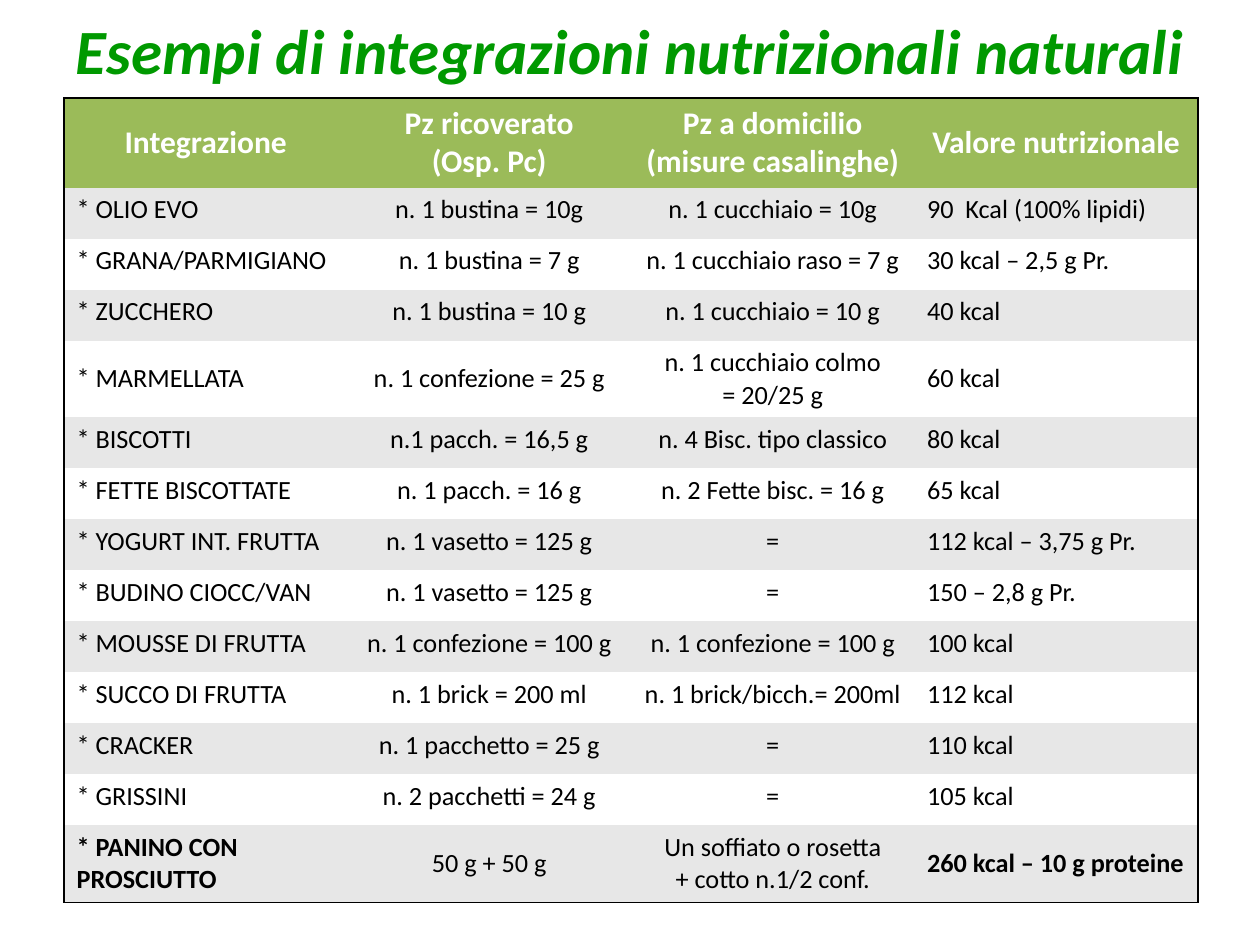
from dataclasses import dataclass

from lxml.etree import SubElement
from pptx import Presentation
from pptx.dml.color import RGBColor as Rgb
from pptx.enum.text import MSO_ANCHOR as Anchor, PP_ALIGN as Align
from pptx.oxml.ns import qn
from pptx.util import Emu, Pt

PX_PER_INCH = 126


@dataclass(frozen=True)
class Theme:
    font: str = "Calibri"
    title_size: int = 36
    header_size: int = 18
    body_size: int = 15
    border_width: int = 1
    title: str = "009900"
    header: str = "9BBB59"
    band: str = "E7E7E7"
    paper: str = "FFFFFF"
    ink: str = "000000"


@dataclass(frozen=True)
class Supplement:
    name: str
    hospital: str
    home: str
    value: str
    bold_ends: bool = False

    def cells(self) -> tuple[str, ...]:
        return (f"* {self.name}", self.hospital, self.home, self.value)


THEME = Theme()
HEADINGS = (
    "Integrazione",
    "Pz ricoverato\n(Osp. Pc)",
    "Pz a domicilio (misure casalinghe)",
    "Valore nutrizionale",
)
SUPPLEMENTS = (
    Supplement("OLIO EVO", "n. 1 bustina = 10g", "n. 1 cucchiaio = 10g", "90  Kcal (100% lipidi)"),
    Supplement("GRANA/PARMIGIANO", "n. 1 bustina = 7 g", "n. 1 cucchiaio raso = 7 g", "30 kcal – 2,5 g Pr."),
    Supplement("ZUCCHERO", "n. 1 bustina = 10 g", "n. 1 cucchiaio = 10 g", "40 kcal"),
    Supplement("MARMELLATA", "n. 1 confezione = 25 g", "n. 1 cucchiaio colmo\n= 20/25 g", "60 kcal"),
    Supplement("BISCOTTI", "n.1 pacch. = 16,5 g", "n. 4 Bisc. tipo classico", "80 kcal"),
    Supplement("FETTE BISCOTTATE", "n. 1 pacch. = 16 g", "n. 2 Fette bisc. = 16 g", "65 kcal"),
    Supplement("YOGURT INT. FRUTTA", "n. 1 vasetto = 125 g", "=", "112 kcal – 3,75 g Pr."),
    Supplement("BUDINO CIOCC/VAN", "n. 1 vasetto = 125 g", "=", "150 – 2,8 g Pr."),
    Supplement("MOUSSE DI FRUTTA", "n. 1 confezione = 100 g", "n. 1 confezione = 100 g", "100 kcal"),
    Supplement("SUCCO DI FRUTTA", "n. 1 brick = 200 ml", "n. 1 brick/bicch.= 200ml", "112 kcal"),
    Supplement("CRACKER", "n. 1 pacchetto = 25 g", "=", "110 kcal"),
    Supplement("GRISSINI", "n. 2 pacchetti = 24 g", "=", "105 kcal"),
    Supplement("PANINO CON PROSCIUTTO", "50 g + 50 g", "Un soffiato o rosetta\n+ cotto n.1/2 conf.",
               "260 kcal – 10 g proteine", bold_ends=True),
)


def px(length: int) -> Emu:
    return Emu(round(length * 914400 / PX_PER_INCH))


def style_text(frame, size: int, color: str, align: Align, bold: bool, italic: bool = False) -> None:
    for paragraph in frame.paragraphs:
        paragraph.alignment = align
        for run in paragraph.runs:
            run.font.name = THEME.font
            run.font.size = Pt(size)
            run.font.bold = bold
            run.font.italic = italic
            run.font.color.rgb = Rgb.from_string(color)


def set_borders(cell, outer_edges: dict[str, bool]) -> None:
    properties = cell._tc.get_or_add_tcPr()
    for position, (edge, is_outer) in enumerate(outer_edges.items()):
        line = SubElement(properties, qn(f"a:ln{edge}"), w=str(Pt(THEME.border_width)))
        if is_outer:
            SubElement(SubElement(line, qn("a:solidFill")), qn("a:srgbClr"), val=THEME.ink)
        else:
            SubElement(line, qn("a:noFill"))
        properties.insert(position, line)


def add_title(slide, text: str) -> None:
    title = slide.shapes.title
    title.left, title.top, title.width, title.height = px(63), px(-4), px(1134), px(107)
    frame = title.text_frame
    frame.text = text
    frame.word_wrap = True
    frame.margin_left = frame.margin_right = 0
    frame.vertical_anchor = Anchor.MIDDLE
    style_text(frame, THEME.title_size, THEME.title, Align.CENTER, bold=True, italic=True)


def fill_row(table, row: int, texts: tuple[str, ...], bold_ends: bool = False) -> None:
    is_header = row == 0
    last_row, last_column = len(table.rows) - 1, len(texts) - 1
    is_tall = is_header or any("\n" in text for text in texts)
    fill = THEME.header if is_header else THEME.band if row % 2 else THEME.paper
    for column, text in enumerate(texts):
        is_end = column in (0, last_column)
        cell = table.cell(row, column)
        cell.text_frame.text = text
        cell.vertical_anchor = Anchor.MIDDLE if is_tall else Anchor.TOP
        cell.fill.solid()
        cell.fill.fore_color.rgb = Rgb.from_string(fill)
        style_text(
            cell.text_frame,
            THEME.header_size if is_header else THEME.body_size,
            THEME.paper if is_header else THEME.ink,
            Align.LEFT if is_end and not is_header else Align.CENTER,
            bold=is_header or (bold_ends and is_end),
        )
        set_borders(cell, {"L": column == 0, "R": column == last_column,
                           "T": is_header, "B": row == last_row})


def add_supplement_table(slide) -> None:
    frame = slide.shapes.add_table(len(SUPPLEMENTS) + 1, len(HEADINGS),
                                   px(64), px(98), px(1134), px(801))
    table = frame.table
    table.horz_banding = False
    for row in table.rows:
        row.height = px(51)
    fill_row(table, 0, HEADINGS)
    for row, supplement in enumerate(SUPPLEMENTS, start=1):
        fill_row(table, row, supplement.cells(), supplement.bold_ends)


def main() -> None:
    deck = Presentation()
    deck.slide_width, deck.slide_height = px(1260), px(945)
    slide = deck.slides.add_slide(deck.slide_layouts.get_by_name("Title Only"))
    add_title(slide, "Esempi di integrazioni nutrizionali naturali")
    add_supplement_table(slide)
    deck.save("out.pptx")


if __name__ == "__main__":
    main()
